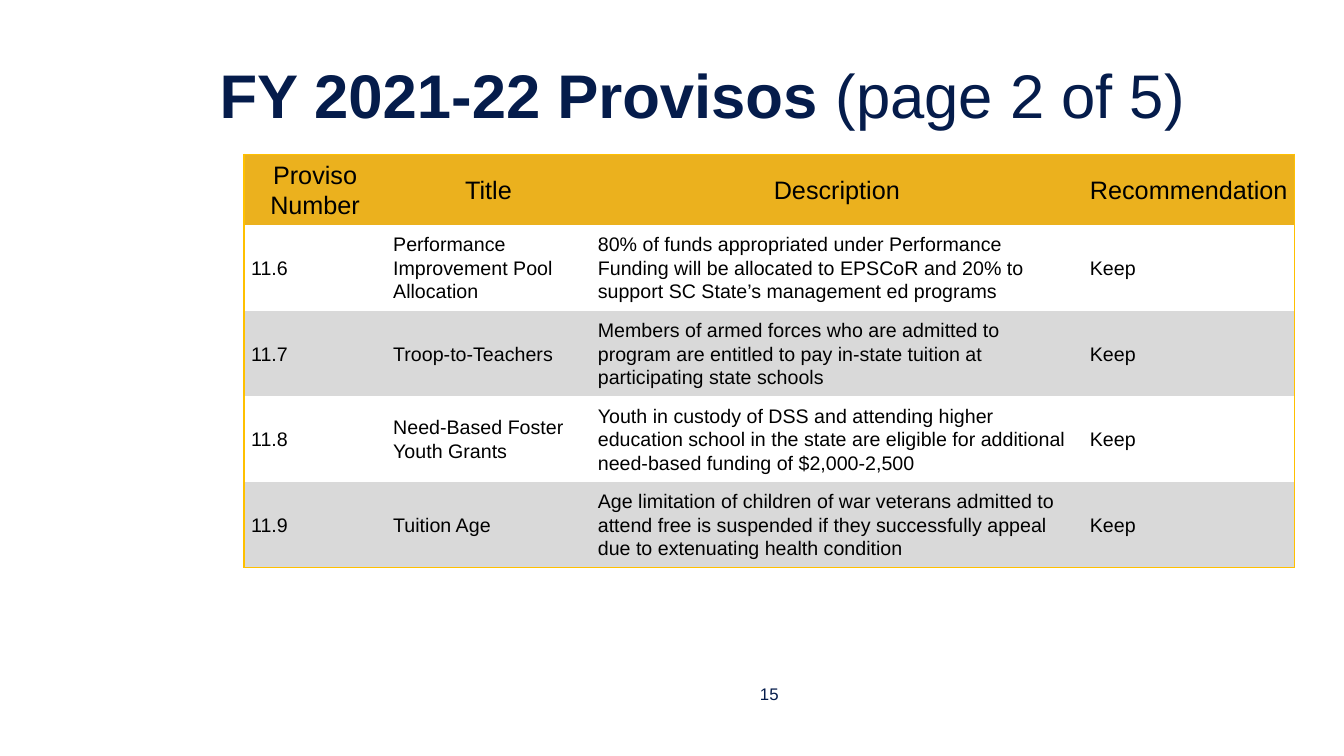
from dataclasses import dataclass

from lxml.etree import SubElement
from pptx import Presentation
from pptx.dml.color import RGBColor
from pptx.enum.text import MSO_ANCHOR as Anchor, PP_ALIGN as Align
from pptx.oxml.ns import qn
from pptx.util import Inches, Pt

COLORS = {
    "navy": "051C4B",
    "black": "000000",
    "gold": "EBB11E",
    "border": "FFC000",
    "white": "FFFFFF",
    "gray": "D9D9D9",
}
FONT = "Arial"
COLUMN_WIDTHS = (1.41, 2.03, 4.88, 2.1)
HEADER_HEIGHT, PROVISO_HEIGHT = 0.65, 0.85
HEADINGS = ("Proviso Number", "Title", "Description", "Recommendation")


@dataclass(frozen=True)
class Proviso:
    number: str
    title: str
    description: str
    recommendation: str = "Keep"

    def values(self) -> tuple:
        return self.number, self.title, self.description, self.recommendation


@dataclass(frozen=True)
class RowStyle:
    fill: str
    size: int
    align: Align
    inset_x: float
    inset_y: float


@dataclass(frozen=True)
class Label:
    left: float
    top: float
    width: float
    height: float
    size: int
    align: Align
    runs: tuple


PROVISOS = (
    Proviso("11.6", "Performance Improvement Pool Allocation",
            "80% of funds appropriated under Performance Funding will be allocated "
            "to EPSCoR and 20% to support SC State’s management ed programs"),
    Proviso("11.7", "Troop-to-Teachers",
            "Members of armed forces who are admitted to program are entitled to pay "
            "in-state tuition at participating state schools"),
    Proviso("11.8", "Need-Based Foster Youth Grants",
            "Youth in custody of DSS and attending higher education school in the state "
            "are eligible for additional need-based funding of $2,000-2,500"),
    Proviso("11.9", "Tuition Age",
            "Age limitation of children of war veterans admitted to attend free is "
            "suspended if they successfully appeal due to extenuating health condition"),
)
HEADER_STYLE = RowStyle("gold", 18, Align.CENTER, 0.05, 0.03)
BAND_STYLES = tuple(RowStyle(fill, 14, Align.LEFT, 0.07, 0.04) for fill in ("white", "gray"))
LABELS = (
    Label(2.08, 0.31, 11.1, 1.25, 44, Align.LEFT,
          (("FY 2021-22 Provisos ", True), ("(page 2 of 5)", False))),
    Label(7.29, 6.68, 0.68, 0.4, 12, Align.CENTER, (("15", False),)),
)


def add_run(paragraph, text: str, size: int, color: str, bold: bool = False) -> None:
    """Append one formatted run to a paragraph."""
    run = paragraph.add_run()
    run.text = text
    run.font.name = FONT
    run.font.size = Pt(size)
    run.font.bold = bold
    run.font.color.rgb = RGBColor.from_string(COLORS[color])


def add_label(slide, label: Label) -> None:
    """Draw a vertically centred text box."""
    box = slide.shapes.add_textbox(*map(Inches, (label.left, label.top, label.width, label.height)))
    frame = box.text_frame
    frame.word_wrap = True
    frame.vertical_anchor = Anchor.MIDDLE
    paragraph = frame.paragraphs[0]
    paragraph.alignment = label.align
    for text, bold in label.runs:
        add_run(paragraph, text, label.size, "navy", bold)


def set_borders(cell, outer_sides: dict) -> None:
    """Line the outer sides of a cell and clear the inner ones."""
    properties = cell._tc.get_or_add_tcPr()
    for side, is_outer in outer_sides.items():
        line = SubElement(properties, qn(f"a:ln{side}"), w=str(Pt(1)))
        if is_outer:
            solid = SubElement(line, qn("a:solidFill"))
            SubElement(solid, qn("a:srgbClr"), val=COLORS["border"])
        else:
            SubElement(line, qn("a:noFill"))


def fill_cell(cell, text: str, style: RowStyle) -> None:
    """Colour a cell and write its text."""
    cell.fill.solid()
    cell.fill.fore_color.rgb = RGBColor.from_string(COLORS[style.fill])
    cell.vertical_anchor = Anchor.MIDDLE
    cell.margin_left = cell.margin_right = Inches(style.inset_x)
    cell.margin_top = cell.margin_bottom = Inches(style.inset_y)
    paragraph = cell.text_frame.paragraphs[0]
    paragraph.alignment = style.align
    paragraph.line_spacing = 1.07
    add_run(paragraph, text, style.size, "black")


def add_provisos(slide) -> None:
    """Draw the table of provisos."""
    rows = [(HEADINGS, HEADER_STYLE)]
    rows += [(proviso.values(), BAND_STYLES[i % 2]) for i, proviso in enumerate(PROVISOS)]
    heights = [HEADER_HEIGHT] + [PROVISO_HEIGHT] * len(PROVISOS)
    size = (sum(COLUMN_WIDTHS), sum(heights))
    table = slide.shapes.add_table(
        len(rows), len(HEADINGS), Inches(2.42), Inches(1.53), *map(Inches, size)).table
    table.first_row = table.horz_banding = False
    for column, width in zip(table.columns, COLUMN_WIDTHS):
        column.width = Inches(width)
    for r, ((values, style), height) in enumerate(zip(rows, heights)):
        table.rows[r].height = Inches(height)
        for c, text in enumerate(values):
            cell = table.cell(r, c)
            set_borders(cell, {"L": c == 0, "R": c == len(HEADINGS) - 1,
                               "T": r == 0, "B": r == len(rows) - 1})
            fill_cell(cell, text, style)


def main() -> None:
    """Build and save the slide."""
    deck = Presentation()
    deck.slide_width, deck.slide_height = Inches(13.33), Inches(7.5)
    slide = deck.slides.add_slide(deck.slide_layouts[6])
    for label in LABELS:
        add_label(slide, label)
    add_provisos(slide)
    deck.save("out.pptx")


if __name__ == "__main__":
    main()
